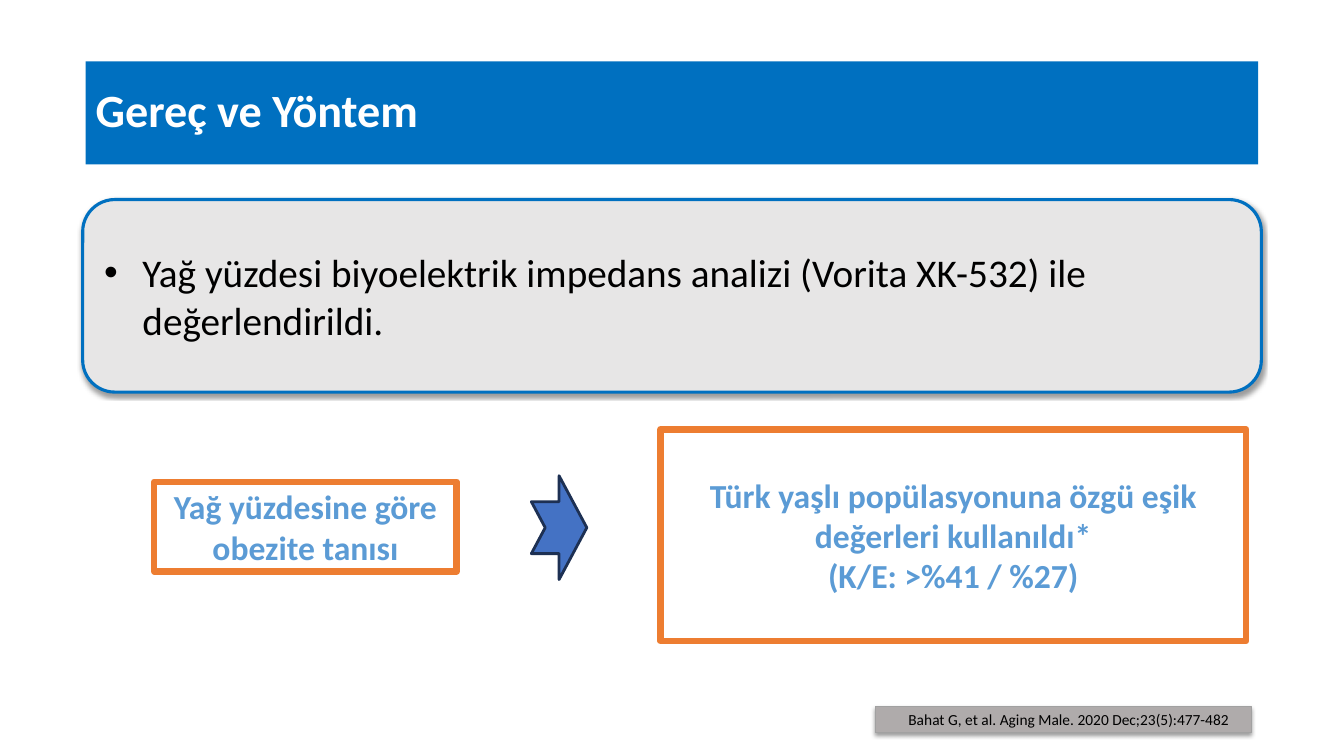
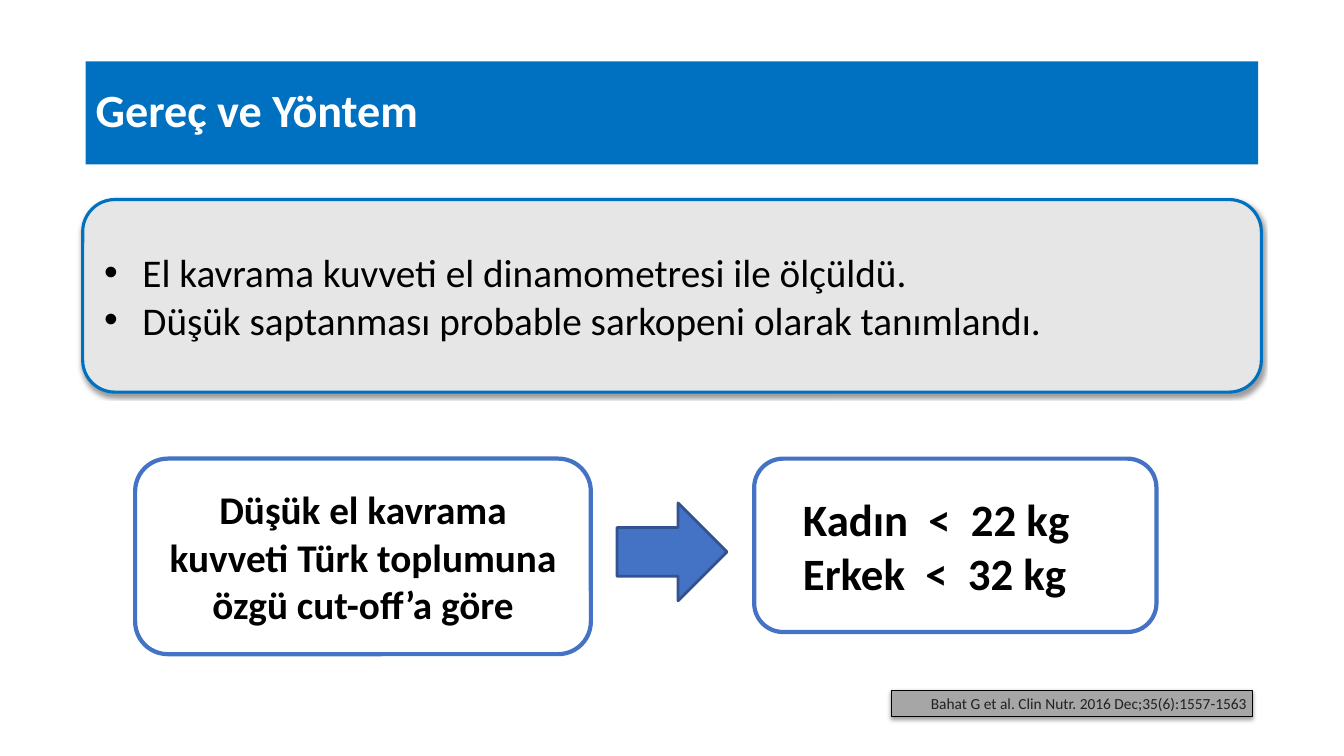
"""Build two method slides with a shared title band and summary panel."""
from dataclasses import dataclass, replace

from lxml import etree
from pptx import Presentation
from pptx.dml.color import RGBColor
from pptx.enum.shapes import MSO_SHAPE
from pptx.enum.text import MSO_ANCHOR, PP_ALIGN
from pptx.oxml.ns import qn
from pptx.util import Emu, Pt

EMU_PER_PX = 9144
SLIDE_WIDTH, SLIDE_HEIGHT = 1333, 750
BULLET_INDENT = 38
FONT = "Calibri"

RECTANGLE = MSO_SHAPE.RECTANGLE
ROUNDED = MSO_SHAPE.ROUNDED_RECTANGLE
RIGHT_ARROW = MSO_SHAPE.RIGHT_ARROW
NOTCHED_ARROW = MSO_SHAPE.NOTCHED_RIGHT_ARROW
LEFT, CENTER, RIGHT = PP_ALIGN.LEFT, PP_ALIGN.CENTER, PP_ALIGN.RIGHT
MIDDLE = MSO_ANCHOR.MIDDLE

BLACK = "000000"
WHITE = "FFFFFF"
BRAND_BLUE = "0070C0"
PANEL_GREY = "E7E6E6"
ACCENT_BLUE = "4472C4"
LIGHT_BLUE = "5B9BD5"
ORANGE = "ED7D31"


@dataclass(frozen=True)
class Box:
    """A preset shape with its style and text; lengths in px."""

    left: int
    top: int
    width: int
    height: int
    kind: MSO_SHAPE = RECTANGLE
    fill: str | None = None
    line: str | None = None
    line_width: float = 0.75
    shadow: bool = False
    text: str = ""
    size: int = 24
    color: str = BLACK
    bold: bool = False
    align: PP_ALIGN = LEFT
    margin_left: int = 5
    margin_right: int = 5
    line_spacing: float = 1.0
    bulleted: bool = False


TITLE_BAND = Box(85, 61, 1163, 102, fill=BRAND_BLUE, text="Gereç ve Yöntem", size=33,
                 color=WHITE, bold=True, margin_left=10, line_spacing=0.9)
PANEL = Box(82, 198, 1169, 191, ROUNDED, PANEL_GREY, BRAND_BLUE, 2.25, shadow=True,
            size=28, margin_left=12, margin_right=12, bulleted=True)
THRESHOLD = Box(0, 0, 0, 0, line=ORANGE, line_width=4.5, color=LIGHT_BLUE,
                bold=True, align=CENTER)
CUTOFF = Box(0, 455, 0, 0, ROUNDED, WHITE, ACCENT_BLUE, 3, bold=True)
CITATION = Box(0, 0, 0, 26, shadow=True, size=11)

SLIDES = [
    [
        replace(THRESHOLD, left=153, top=478, width=300, height=89,
                text="Yağ yüzdesine göre obezite tanısı"),
        Box(527, 472, 55, 103, NOTCHED_ARROW, ACCENT_BLUE, "1D3053", 2),
        replace(THRESHOLD, left=655, top=426, width=581, height=210,
                text="Türk yaşlı popülasyonuna özgü eşik değerleri kullanıldı*\n"
                     "(K/E: >%41 / %27)"),
        replace(CITATION, left=868, top=701, width=373, fill="AFABAB", line="A1A1A1",
                margin_left=33, text="Bahat G, et al. Aging Male. 2020 Dec;23(5):477-482"),
        replace(PANEL, text="Yağ yüzdesi biyoelektrik impedans analizi (Vorita XK-532) "
                            "ile değerlendirildi."),
        TITLE_BAND,
    ],
    [
        replace(CUTOFF, left=134, width=452, height=194, size=28, align=CENTER,
                margin_left=12, margin_right=12,
                text="Düşük el kavrama kuvveti Türk toplumuna özgü cut-off’a göre"),
        Box(612, 499, 109, 97, RIGHT_ARROW, ACCENT_BLUE, "32538F", 2),
        replace(CUTOFF, left=748, width=399, height=172, size=32, margin_left=40,
                text="Kadın  <  22 kg\nErkek  <  32 kg"),
        replace(CITATION, left=884, top=685, width=358, fill="A6A6A6", line=BLACK,
                color="212121", align=RIGHT,
                text="Bahat G et al. Clin Nutr. 2016 Dec;35(6):1557-1563"),
        replace(PANEL, text="El kavrama kuvveti el dinamometresi ile ölçüldü.\n"
                            "Düşük saptanması probable sarkopeni olarak tanımlandı."),
        TITLE_BAND,
    ],
]


def px(length: int) -> Emu:
    """Turn px into EMU."""
    return Emu(length * EMU_PER_PX)


def rgb(value: str) -> RGBColor:
    """Turn a hex string into a colour."""
    return RGBColor.from_string(value)


def add_shadow(shape) -> None:
    """Give the shape a soft shadow straight below it."""
    effects = shape.element.spPr.find(qn("a:effectLst"))
    outer = etree.SubElement(effects, qn("a:outerShdw"), blurRad="38100", dist="20000",
                             dir="5400000", rotWithShape="0")
    color = etree.SubElement(outer, qn("a:srgbClr"), val=BLACK)
    etree.SubElement(color, qn("a:alpha"), val="38000")


def add_bullet(paragraph) -> None:
    """Give the paragraph a round bullet and a hanging indent."""
    properties = paragraph._p.get_or_add_pPr()
    properties.set("marL", str(px(BULLET_INDENT)))
    properties.set("indent", str(-px(BULLET_INDENT)))
    etree.SubElement(properties, qn("a:buFont"), typeface="Arial")
    etree.SubElement(properties, qn("a:buChar"), char="•")


def write_text(shape, box: Box) -> None:
    """Fill the shape with the text of the box and format it."""
    frame = shape.text_frame
    frame.word_wrap = True
    frame.vertical_anchor = MIDDLE
    frame.margin_left, frame.margin_right = px(box.margin_left), px(box.margin_right)
    frame.margin_top = frame.margin_bottom = px(5)
    frame.text = box.text
    for paragraph in frame.paragraphs:
        paragraph.alignment = box.align
        paragraph.line_spacing = box.line_spacing
        if box.bulleted:
            add_bullet(paragraph)
        for run in paragraph.runs:
            run.font.name = FONT
            run.font.size = Pt(box.size)
            run.font.bold = box.bold
            run.font.color.rgb = rgb(box.color)


def draw_box(slide, box: Box) -> None:
    """Draw one box on the slide."""
    shape = slide.shapes.add_shape(box.kind, px(box.left), px(box.top),
                                   px(box.width), px(box.height))
    shape.shadow.inherit = False
    if box.fill:
        shape.fill.solid()
        shape.fill.fore_color.rgb = rgb(box.fill)
    else:
        shape.fill.background()
    if box.line:
        shape.line.color.rgb = rgb(box.line)
        shape.line.width = Pt(box.line_width)
    else:
        shape.line.fill.background()
    if box.shadow:
        add_shadow(shape)
    if box.text:
        write_text(shape, box)


def main() -> None:
    """Build and save the presentation."""
    presentation = Presentation()
    presentation.slide_width = px(SLIDE_WIDTH)
    presentation.slide_height = px(SLIDE_HEIGHT)
    blank_layout = presentation.slide_layouts[6]
    for boxes in SLIDES:
        slide = presentation.slides.add_slide(blank_layout)
        for box in boxes:
            draw_box(slide, box)
    presentation.save("out.pptx")


if __name__ == "__main__":
    main()
